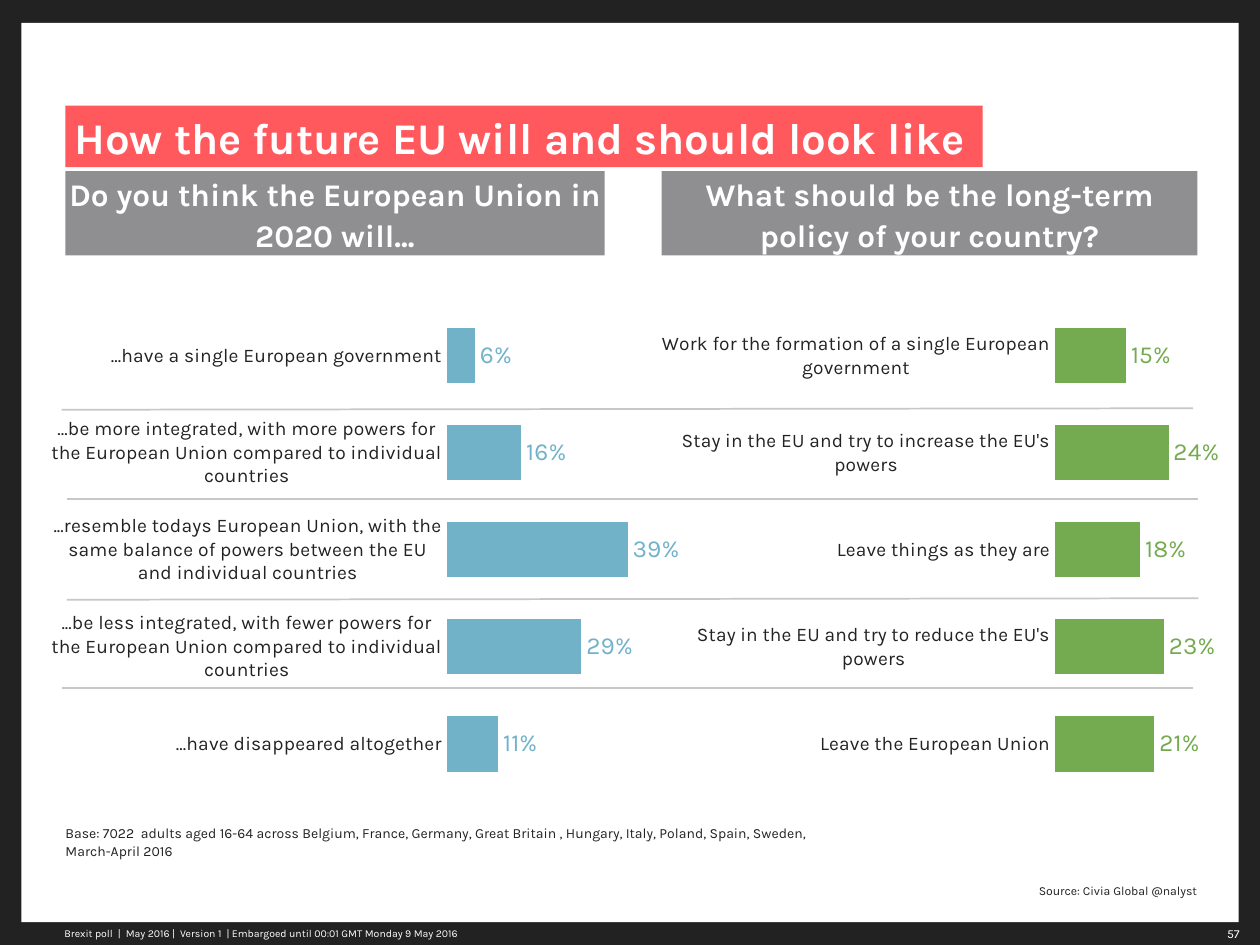
from lxml import etree
from pptx import Presentation
from pptx import util as u
from pptx.chart.data import CategoryChartData
from pptx.dml.color import RGBColor
from pptx.enum import chart as charts, shapes, text
from pptx.oxml import parse_xml
from pptx.oxml.ns import nsdecls, qn

INK = RGBColor(0x22, 0x22, 0x23)
WHITE = RGBColor(0xFF, 0xFF, 0xFF)
CORAL = RGBColor(0xFF, 0x58, 0x5D)
GREY = RGBColor(0x8F, 0x8F, 0x92)
RULE = RGBColor(0xC7, 0xC7, 0xC9)
BLUE = RGBColor(0x71, 0xB2, 0xC9)
GREEN = RGBColor(0x74, 0xAA, 0x50)
FONT = "Karla"

EXPECTATIONS = [
    ("...have a single European government", 6),
    ("...be more integrated, with more powers for the European Union "
     "compared to individual countries", 16),
    ("...resemble todays European Union, with the same balance of powers "
     "between the EU and individual countries", 39),
    ("...be less integrated, with fewer powers for the European Union "
     "compared to individual countries", 29),
    ("...have disappeared altogether", 11),
]
POLICIES = [
    ("Work for the formation of a single European government", 15),
    ("Stay in the EU and try to increase the EU's powers", 24),
    ("Leave things as they are", 18),
    ("Stay in the EU and try to reduce the EU's powers", 23),
    ("Leave the European Union", 21),
]


def cm_box(box):
    return [u.Cm(length) for length in box]


def add_block(slide, box, fill):
    block = slide.shapes.add_shape(shapes.MSO_SHAPE.RECTANGLE, *cm_box(box))
    block.shadow.inherit = False
    block.fill.solid()
    block.fill.fore_color.rgb = fill
    block.line.fill.background()
    return block


def write(shape, words, size, color, align=text.PP_ALIGN.LEFT,
          anchor=text.MSO_ANCHOR.TOP, bold=False, spacing=None,
          margins=(0, 0), wrap=True):
    """Fill a shape with one paragraph; margins are (horizontal, vertical) in cm."""
    frame = shape.text_frame
    frame.word_wrap = wrap
    frame.vertical_anchor = anchor
    frame.margin_left = frame.margin_right = u.Cm(margins[0])
    frame.margin_top = frame.margin_bottom = u.Cm(margins[1])
    frame.text = words
    paragraph = frame.paragraphs[0]
    paragraph.alignment = align
    paragraph.line_spacing = spacing
    font = paragraph.runs[0].font
    font.name, font.size, font.bold = FONT, u.Pt(size), bold
    font.color.rgb = color


def add_text(slide, box, words, size, color, **style):
    write(slide.shapes.add_textbox(*cm_box(box)), words, size, color, **style)


def set_plot_layout(chart, x, y, width, height):
    """Fix the inner plot area, in fractions of the chart."""
    plot_area = chart._chartSpace.chart.plotArea
    for old in plot_area.findall(qn("c:layout")):
        plot_area.remove(old)
    plot_area.insert(0, parse_xml(
        f'<c:layout {nsdecls("c")}><c:manualLayout><c:layoutTarget val="inner"/>'
        '<c:xMode val="edge"/><c:yMode val="edge"/>'
        f'<c:x val="{x}"/><c:y val="{y}"/><c:w val="{width}"/><c:h val="{height}"/>'
        '</c:manualLayout></c:layout>'))


def add_bar_chart(slide, box, answers, color, plot_left, plot_width):
    data = CategoryChartData(number_format="0")
    data.categories = [answer for answer, _ in answers]
    data.add_series("Series 1", [share for _, share in answers])
    chart = slide.shapes.add_chart(
        charts.XL_CHART_TYPE.BAR_CLUSTERED, *cm_box(box), data).chart
    chart.has_legend = chart.has_title = False
    chart.font.name, chart.font.size = FONT, u.Pt(18)
    chart.font.color.rgb = INK

    categories = chart.category_axis
    categories.reverse_order = True
    categories.major_tick_mark = charts.XL_TICK_MARK.NONE
    categories.format.line.fill.background()
    categories.tick_labels.font.size = u.Pt(11)
    values = chart.value_axis
    values.minimum_scale, values.maximum_scale = 0, 50
    values.has_major_gridlines = False
    values.visible = False

    plot = chart.plots[0]
    plot.gap_width = 75
    plot.vary_by_categories = False
    fill = plot.series[0].format.fill
    fill.solid()
    fill.fore_color.rgb = color
    plot.has_data_labels = True
    labels = plot.data_labels
    labels.show_value = True
    labels.number_format, labels.number_format_is_linked = '0"%"', False
    labels.position = charts.XL_LABEL_POSITION.OUTSIDE_END
    labels.font.name, labels.font.size = FONT, u.Pt(14)
    labels.font.color.rgb = color
    set_plot_layout(chart, plot_left, 0.02, plot_width, 0.96)


def add_question(slide, box, question, answers, color, chart_shift, plot):
    """Place a heading bar and, below it, the chart of answers."""
    left, top, width = box
    heading = add_block(slide, (left, top, width, 1.7), GREY)
    write(heading, question, 18, WHITE, align=text.PP_ALIGN.CENTER,
          bold=True, spacing=1.1)
    add_bar_chart(slide, (left + chart_shift, top + 2.54, 12.95, 10.19),
                  answers, color, *plot)


def add_row_rules(slide, left, width):
    for shift, start, end in ((0, 8.26, 8.23), (0.11, 10.06, 10.06),
                              (0.11, 12.09, 12.06), (0, 13.87, 13.87)):
        rule = slide.shapes.add_connector(
            shapes.MSO_CONNECTOR.STRAIGHT, u.Cm(left + shift), u.Cm(start),
            u.Cm(left + shift + width), u.Cm(end))
        rule.line.color.rgb = RULE
        rule.line.width = u.Pt(1)
        etree.SubElement(rule._element.spPr, qn("a:effectLst"))


def add_frame(slide):
    """Dark surround, white page and the footer line."""
    slide.background.fill.solid()
    slide.background.fill.fore_color.rgb = INK
    add_block(slide, (0.43, 0.46, 24.54, 18.59 - 0.46), WHITE)
    add_text(slide, (23.8, 18.57, 1.37, 0.5), "57", 7, WHITE,
             align=text.PP_ALIGN.RIGHT, spacing=1.1, margins=(0.18, 0.08))
    add_text(slide, (1.3, 18.59, 11.63, 0.46),
             "Brexit poll  |  May 2016 |  Version 1  | "
             "Embargoed until 00:01 GMT Monday 9 May 2016", 6, WHITE,
             anchor=text.MSO_ANCHOR.MIDDLE, wrap=False)


def add_notes_on_data(slide):
    bottom = text.MSO_ANCHOR.BOTTOM
    add_text(slide, (1.32, 16.87, 14.99, 0.46),
             "Base: 7022  adults aged 16-64 across Belgium, France, Germany, "
             "Great Britain , Hungary, Italy, Poland, Spain, Sweden, "
             "March-April 2016", 8, INK, anchor=bottom, spacing=1.1)
    add_text(slide, (17.15, 17.65, 6.98, 0.46), "Source: Civia Global @nalyst",
             7, INK, align=text.PP_ALIGN.RIGHT, anchor=bottom, spacing=1.1)


def main():
    presentation = Presentation()
    presentation.slide_width, presentation.slide_height = u.Cm(25.4), u.Cm(19.05)
    slide = presentation.slides.add_slide(presentation.slide_layouts[6])
    add_frame(slide)
    title = add_block(slide, (1.32, 2.13, 18.49, 1.24), CORAL)
    write(title, "How the future EU will and should look like", 25, WHITE,
          anchor=text.MSO_ANCHOR.BOTTOM, bold=True, margins=(0.18, 0.08),
          wrap=False)
    add_question(slide, (1.32, 3.45, 10.87),
                 "Do you think the European Union in 2020 will...",
                 EXPECTATIONS, BLUE, -0.33, (0.62, 0.36))
    add_question(slide, (13.34, 3.45, 10.8),
                 "What should be the long-term policy of your country?",
                 POLICIES, GREEN, 0, (0.61, 0.37))
    add_row_rules(slide, 1.24, 22.81)
    add_notes_on_data(slide)
    presentation.save("out.pptx")


if __name__ == "__main__":
    main()
